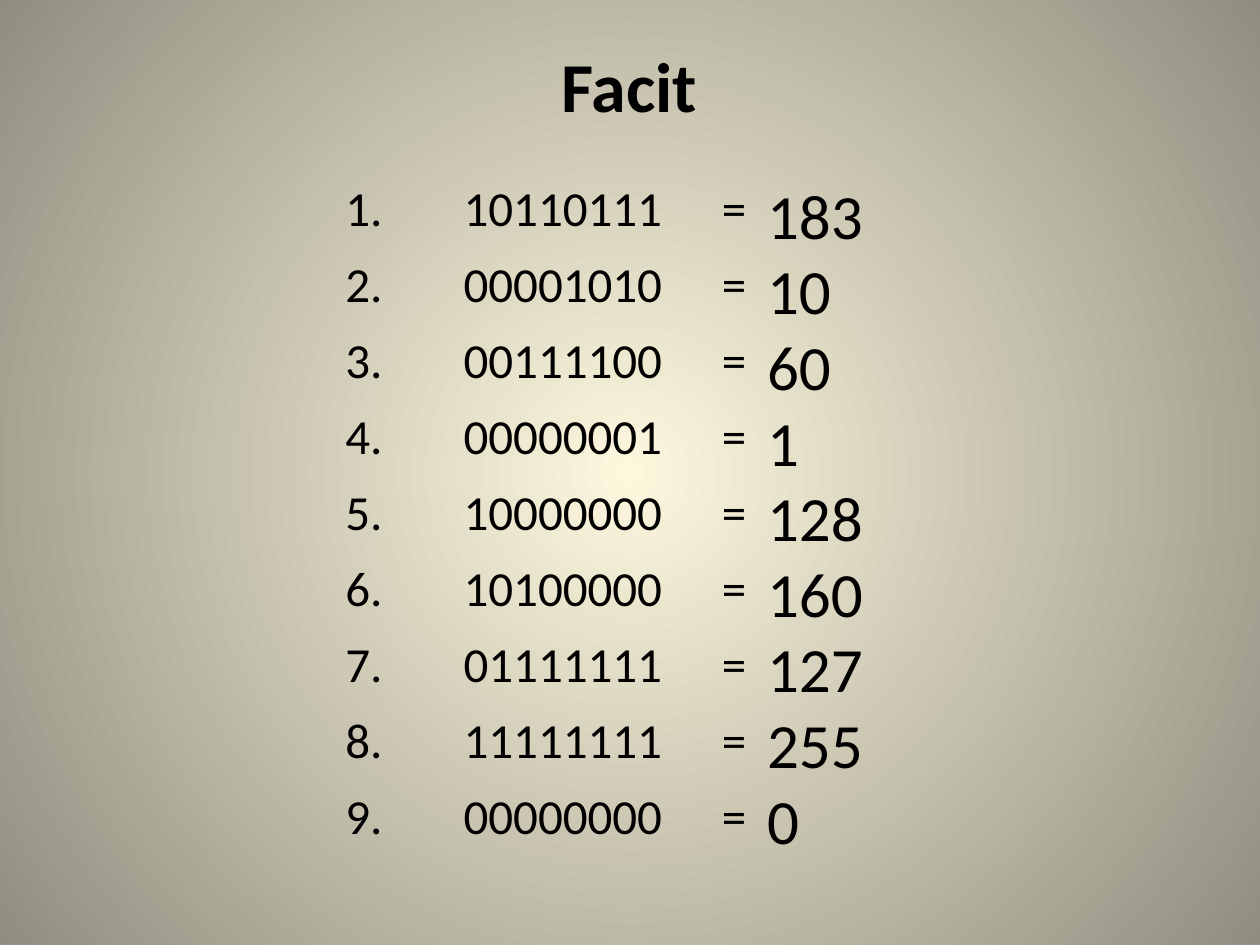
from lxml import etree
from pptx import Presentation
from pptx import util as u
from pptx.dml.color import RGBColor
from pptx.enum import text
from pptx.oxml.ns import qn

TITLE = "Facit"
ANSWERS = [
    ("10110111", 183),
    ("00001010", 10),
    ("00111100", 60),
    ("00000001", 1),
    ("10000000", 128),
    ("10100000", 160),
    ("01111111", 127),
    ("11111111", 255),
    ("00000000", 0),
]
GLOW = ["FCF7DD", "918E81"]  # centre, corner
COLUMNS = [0.94, 2.05, 0.55]
TABLE_LEFT, TABLE_TOP, TABLE_HEIGHT = 2.64, 1.38, 5.43
NO_STYLE = "{2D5ABB26-0587-4C30-8999-92F81FD0307C}"


def color(value):
    return RGBColor.from_string(value)


def write(frame, lines, size, bold=False, ink="000000"):
    for number, line in enumerate(lines):
        para = frame.add_paragraph() if number else frame.paragraphs[0]
        span = para.add_run()
        span.text = line
        span.font.name = "Calibri"
        span.font.size = u.Pt(size)
        span.font.bold = bold
        span.font.color.rgb = color(ink)


def add_text(page, area, lines, **style):
    box = page.shapes.add_textbox(*(u.Inches(n) for n in area))
    box.text_frame.word_wrap = False
    box.text_frame.auto_size = text.MSO_AUTO_SIZE.SHAPE_TO_FIT_TEXT
    write(box.text_frame, lines, **style)


def paint_background(page):
    fill = page.background.fill
    fill.gradient()
    for stop, value, position in zip(fill.gradient_stops, GLOW, (0, 1)):
        stop.color.rgb = color(value)
        stop.position = position
    # Turn the linear gradient into a circular one around the centre
    gradient = page.element.find(".//" + qn("a:gradFill"))
    linear = gradient.find(qn("a:lin"))
    circle = etree.Element(qn("a:path"), {"path": "circle"})
    etree.SubElement(circle, qn("a:fillToRect"), dict.fromkeys("ltrb", "50000"))
    gradient.replace(linear, circle)


def add_table(page):
    rows = [(f"{number}.", binary, "=")
            for number, (binary, _) in enumerate(ANSWERS, 1)]
    area = TABLE_LEFT, TABLE_TOP, sum(COLUMNS), TABLE_HEIGHT
    frame = page.shapes.add_table(len(rows), len(COLUMNS),
                                  *(u.Inches(n) for n in area))
    table = frame.table
    table.first_row = table.horz_banding = False
    frame.element.find(".//" + qn("a:tableStyleId")).text = NO_STYLE
    for column, width in zip(table.columns, COLUMNS):
        column.width = u.Inches(width)
    for row, values in zip(table.rows, rows):
        for cell, value in zip(row.cells, values):
            cell.fill.background()
            write(cell.text_frame, [value], size=28)


def main():
    deck = Presentation()
    deck.slide_width, deck.slide_height = u.Inches(10), u.Inches(7.5)
    page = deck.slides.add_slide(deck.slide_layouts[6])
    paint_background(page)

    # Heading, binary numbers, decimal answers
    add_text(page, (4.36, 0.29, 1.29, 0.77), [TITLE], size=40, bold=True)
    add_table(page)
    add_text(page, (5.99, 1.35, 0.97, 5.55),
             [str(decimal) for _, decimal in ANSWERS], size=36)

    deck.save("out.pptx")


if __name__ == "__main__":
    main()
